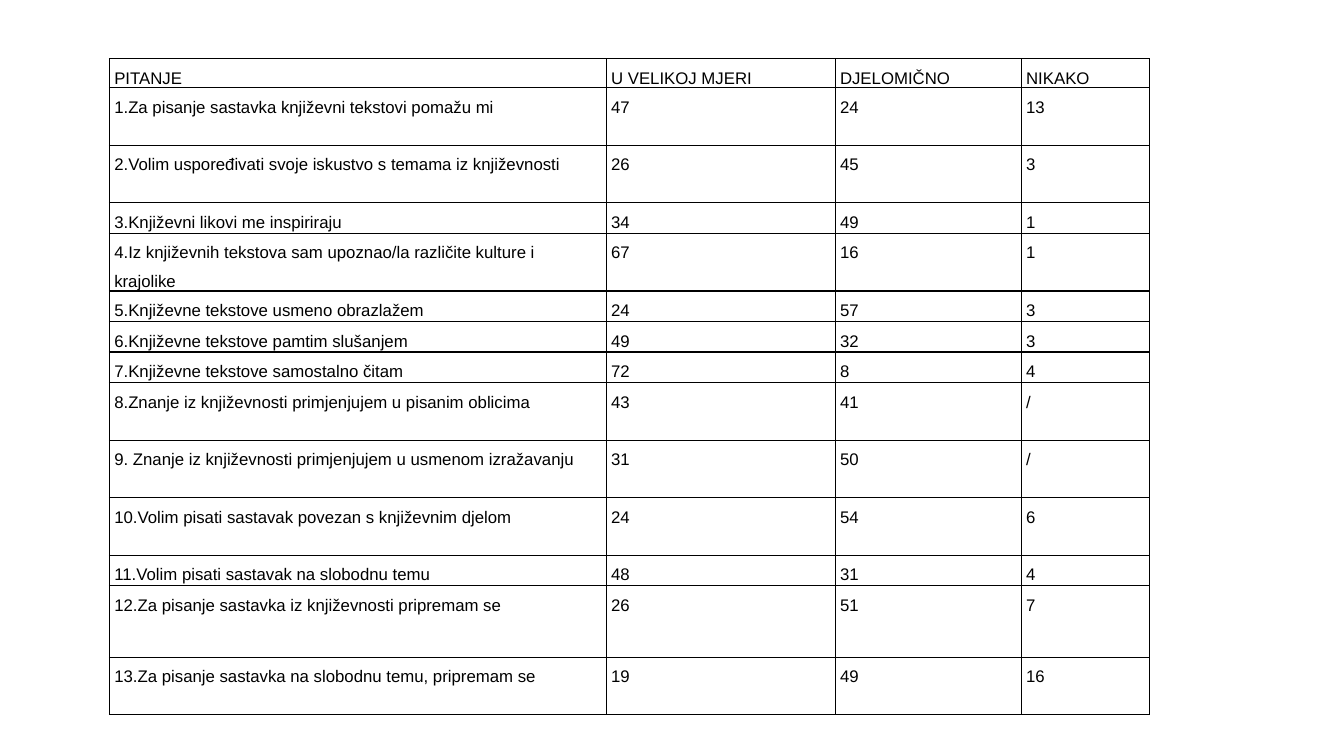
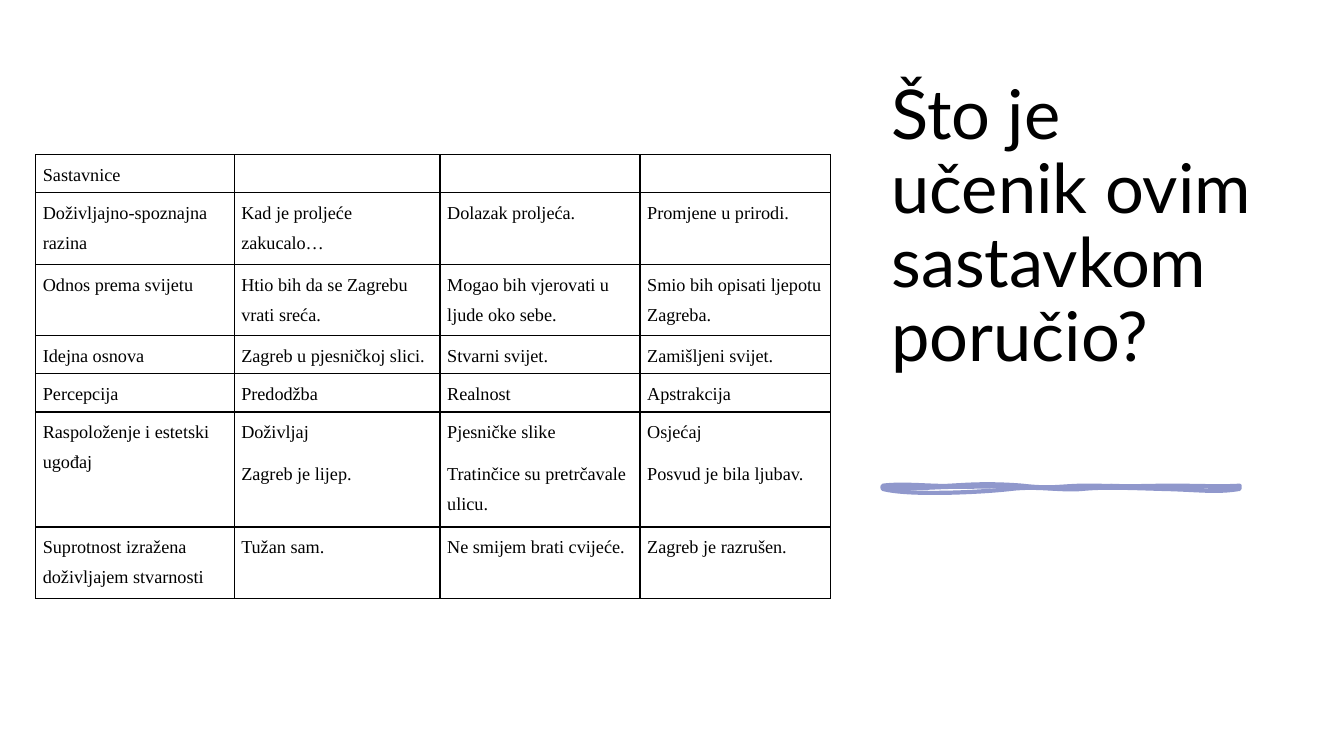
"""Build two slides: a pupil survey table and a table of essay components."""
import pptx
import pptx.dml.color
import pptx.enum.shapes
import pptx.enum.text
import pptx.oxml
import pptx.oxml.ns
import pptx.util

Cm, Pt = pptx.util.Cm, pptx.util.Pt
RGB = pptx.dml.color.RGBColor
NS = pptx.oxml.ns.nsdecls("a")


class Theme:
    ink = RGB(0x00, 0x00, 0x00)
    paper = RGB(0xFF, 0xFF, 0xFF)
    brush = RGB(0x90, 0x98, 0xCC)
    head = ("Lato", Pt(49))
    survey = ("Arial", Pt(12))
    essay = ("Times New Roman", Pt(13))
    rule = Pt(1)
    stroke = Pt(3)


def style(para, face, lead, after):
    para.font.name, para.font.size = face
    para.font.color.rgb = Theme.ink
    para.line_spacing = lead
    para.space_after = Pt(after)


def grid(slide, left, top, cols, rows, face, inset):
    table = slide.shapes.add_table(
        len(rows), len(cols), Cm(left), Cm(top),
        Cm(sum(cols)), Cm(sum(row[0] for row in rows))).table
    table.first_row = table.horz_banding = False
    for col, width in zip(table.columns, cols):
        col.width = Cm(width)
    for r, (height, *texts) in enumerate(rows):
        table.rows[r].height = Cm(height)
        for c, text in enumerate(texts):
            cell = table.cell(r, c)
            cell.margin_left = cell.margin_right = Cm(inset)
            cell.margin_top, cell.margin_bottom = Cm(0.02), 0
            cell.text = text
            for para in cell.text_frame.paragraphs:
                style(para, face, 1.5, 8)
            cell.fill.background()
            props = cell._tc.get_or_add_tcPr()
            for i, side in enumerate("LRTB"):
                props.insert(i, pptx.oxml.parse_xml(
                    f'<a:ln{side} {NS} w="{Theme.rule}">'
                    f'<a:solidFill><a:srgbClr val="{Theme.ink}"/></a:solidFill>'
                    f'</a:ln{side}>'))


deck = pptx.Presentation()
deck.slide_width, deck.slide_height = Cm(33.87), Cm(19.05)

short, tall = 0.77, 1.45
survey = [
    (0.73, "PITANJE", "U VELIKOJ MJERI", "DJELOMIČNO", "NIKAKO"),
    (tall, "1.Za pisanje sastavka književni tekstovi pomažu mi", "47", "24", "13"),
    (tall, "2.Volim uspoređivati svoje iskustvo s temama iz književnosti", "26", "45", "3"),
    (short, "3.Književni likovi me inspiriraju", "34", "49", "1"),
    (tall, "4.Iz književnih tekstova sam upoznao/la različite kulture i krajolike",
     "67", "16", "1"),
    (short, "5.Književne tekstove usmeno obrazlažem", "24", "57", "3"),
    (short, "6.Književne tekstove pamtim slušanjem", "49", "32", "3"),
    (short, "7.Književne tekstove samostalno čitam", "72", "8", "4"),
    (tall, "8.Znanje iz književnosti primjenjujem u pisanim oblicima", "43", "41", "/"),
    (tall, "9. Znanje iz književnosti primjenjujem u usmenom izražavanju", "31", "50", "/"),
    (tall, "10.Volim pisati sastavak povezan s književnim djelom", "24", "54", "6"),
    (short, "11.Volim pisati sastavak na slobodnu temu", "48", "31", "4"),
    (1.8, "12.Za pisanje sastavka iz književnosti pripremam se", "26", "51", "7"),
    (tall, "13.Za pisanje sastavka na slobodnu temu, pripremam se", "19", "49", "16"),
]
slide = deck.slides.add_slide(deck.slide_layouts[6])
grid(slide, 2.76, 1.48, (12.52, 5.77, 4.69, 3.22), survey, Theme.survey, 0.12)

one, two = 0.96, 1.8
essay = [
    (one, "Sastavnice", "", "", ""),
    (two, "Doživljajno-spoznajna razina", "Kad je proljeće zakucalo…",
     "Dolazak proljeća.", "Promjene u prirodi."),
    (two, "Odnos prema svijetu", "Htio bih da se Zagrebu vrati sreća.",
     "Mogao bih vjerovati u ljude oko sebe.", "Smio bih opisati ljepotu Zagreba."),
    (one, "Idejna osnova", "Zagreb u pjesničkoj slici.", "Stvarni svijet.",
     "Zamišljeni svijet."),
    (one, "Percepcija", "Predodžba", "Realnost", "Apstrakcija"),
    (2.9, "Raspoloženje i estetski ugođaj", "Doživljaj\nZagreb je lijep.",
     "Pjesničke slike\nTratinčice su pretrčavale ulicu.",
     "Osjećaj\nPosvud je bila ljubav."),
    (two, "Suprotnost izražena doživljajem stvarnosti", "Tužan sam.",
     "Ne smijem brati cvijeće.", "Zagreb je razrušen."),
]
slide = deck.slides.add_slide(deck.slide_layouts[5])
sheet = slide.shapes.add_shape(
    pptx.enum.shapes.MSO_SHAPE.RECTANGLE, 0, 0, deck.slide_width, deck.slide_height)
sheet.shadow.inherit = False
sheet.fill.solid()
sheet.fill.fore_color.rgb = Theme.paper
sheet.line.fill.background()

title = slide.shapes.title
sheet._element.addnext(title._element)
title.left, title.top, title.width, title.height = Cm(22.21), Cm(1.8), Cm(9.9), Cm(7.82)
frame = title.text_frame
frame.text = "Što je učenik ovim sastavkom poručio?"
frame.word_wrap = True
frame.auto_size = pptx.enum.text.MSO_AUTO_SIZE.NONE
frame.vertical_anchor = pptx.enum.text.MSO_ANCHOR.BOTTOM
frame.paragraphs[0].alignment = pptx.enum.text.PP_ALIGN.LEFT
style(frame.paragraphs[0], Theme.head, 0.9, 6)

left, top, right, base = 2225, 1224, 3124, 1232
start = (left, top)
edge = [
    ((2278, 1217), (2357, 1227), (2395, 1224)),
    ((2433, 1222), (2489, 1217), (2576, 1224)),
    ((2662, 1234), (2675, 1222), (2764, 1224)),
    ((2855, 1227), (2888, 1224), (2954, 1224)),
    ((3020, 1224), (3076, 1227), (3124, 1224)),
    ((3124, 1227), (3124, 1232), (3124, 1232)),
    ((3063, 1242), (3023, 1234), (2926, 1232)),
    ((2830, 1229), (2781, 1227), (2728, 1232)),
    ((2675, 1237), (2616, 1224), (2548, 1232)),
    ((2482, 1240), (2291, 1250), (2225, 1232)),
    ((2222, 1229), (2225, 1227), start),
]
core = [
    ((2306, 1222), (2311, 1224), (2395, 1224)),
    ((2479, 1227), (2502, 1222), (2548, 1224)),
    ((2593, 1227), (2680, 1234), (2746, 1224)),
    ((2812, 1214), (2870, 1224), (2918, 1224)),
    ((2964, 1224), (3025, 1232), (3124, 1224)),
    ((3124, 1229), (3124, 1229), (3124, 1232)),
    ((3061, 1224), (3002, 1237), (2944, 1232)),
    ((2888, 1227), (2840, 1224), (2746, 1232)),
    ((2654, 1240), (2647, 1234), (2593, 1232)),
    ((2540, 1229), (2479, 1232), (2413, 1232)),
    ((2347, 1232), (2299, 1240), (2225, 1232)),
    ((2225, 1229), (2225, 1229), start),
]
pen = slide.shapes.build_freeform(*start, scale=Cm(1) / 100)
pen.add_line_segments([(right, top), (right, base), (left, base)], close=True)
brush = pen.convert_to_shape()
brush.shadow.inherit = False
brush.fill.solid()
brush.fill.fore_color.rgb = Theme.brush
brush.line.color.rgb = Theme.brush
brush.line.width = Theme.stroke
routes = brush._element.spPr.find(".//" + pptx.oxml.ns.qn("a:pathLst"))
routes.clear()
for curves, mode in ((edge, 'fill="none"'), (core, 'stroke="0"')):
    bends = "".join(
        "<a:cubicBezTo>"
        + "".join(f'<a:pt x="{x - left}" y="{y - top}"/>' for x, y in curve)
        + "</a:cubicBezTo>" for curve in curves)
    routes.append(pptx.oxml.parse_xml(
        f'<a:path {NS} w="{right - left}" h="{base - top}" {mode}>'
        f'<a:moveTo><a:pt x="0" y="0"/></a:moveTo>{bends}<a:close/></a:path>'))

grid(slide, 0.9, 3.9, (5, 5.19, 5.04, 4.8), essay, Theme.essay, 0.18)

deck.save("out.pptx")
